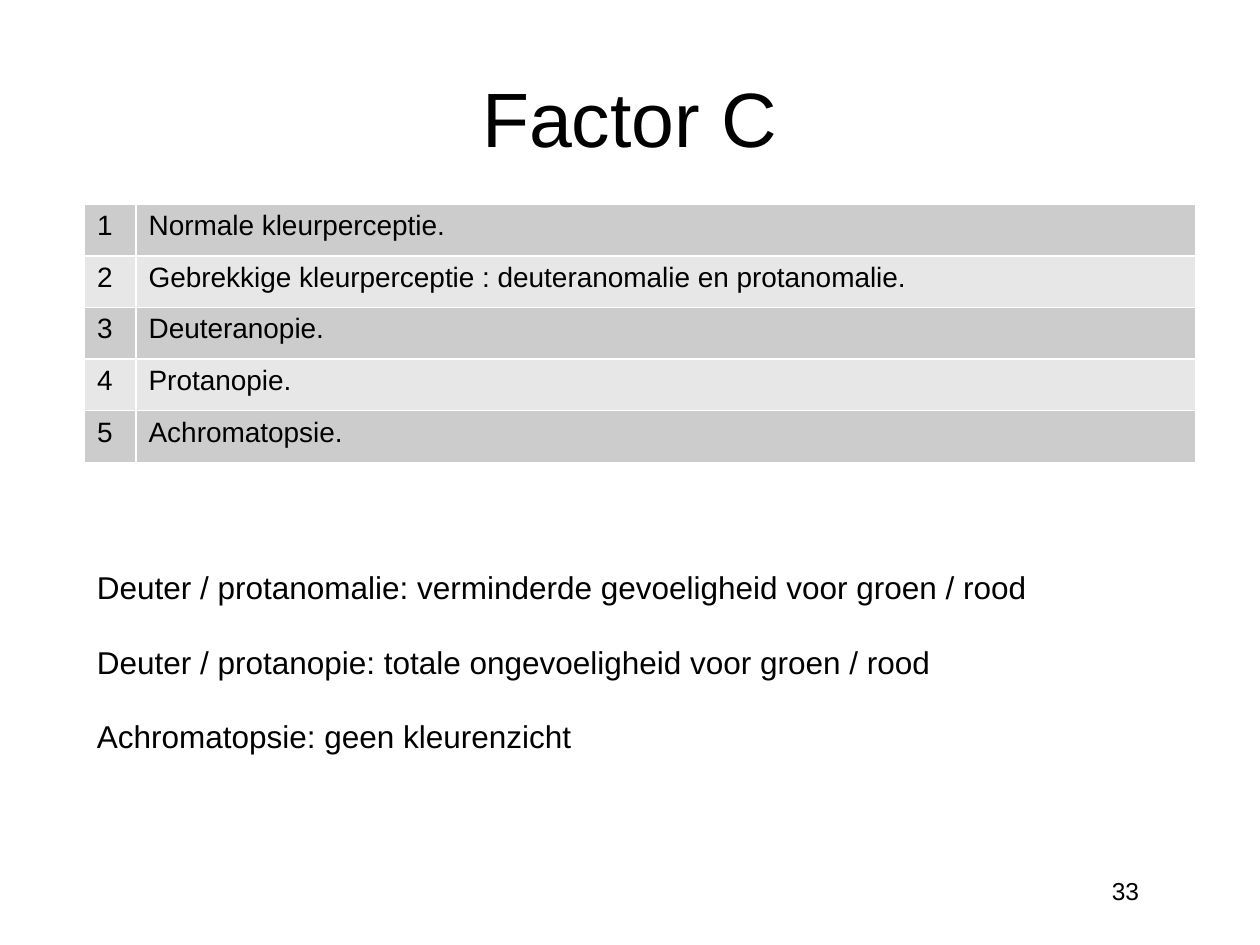
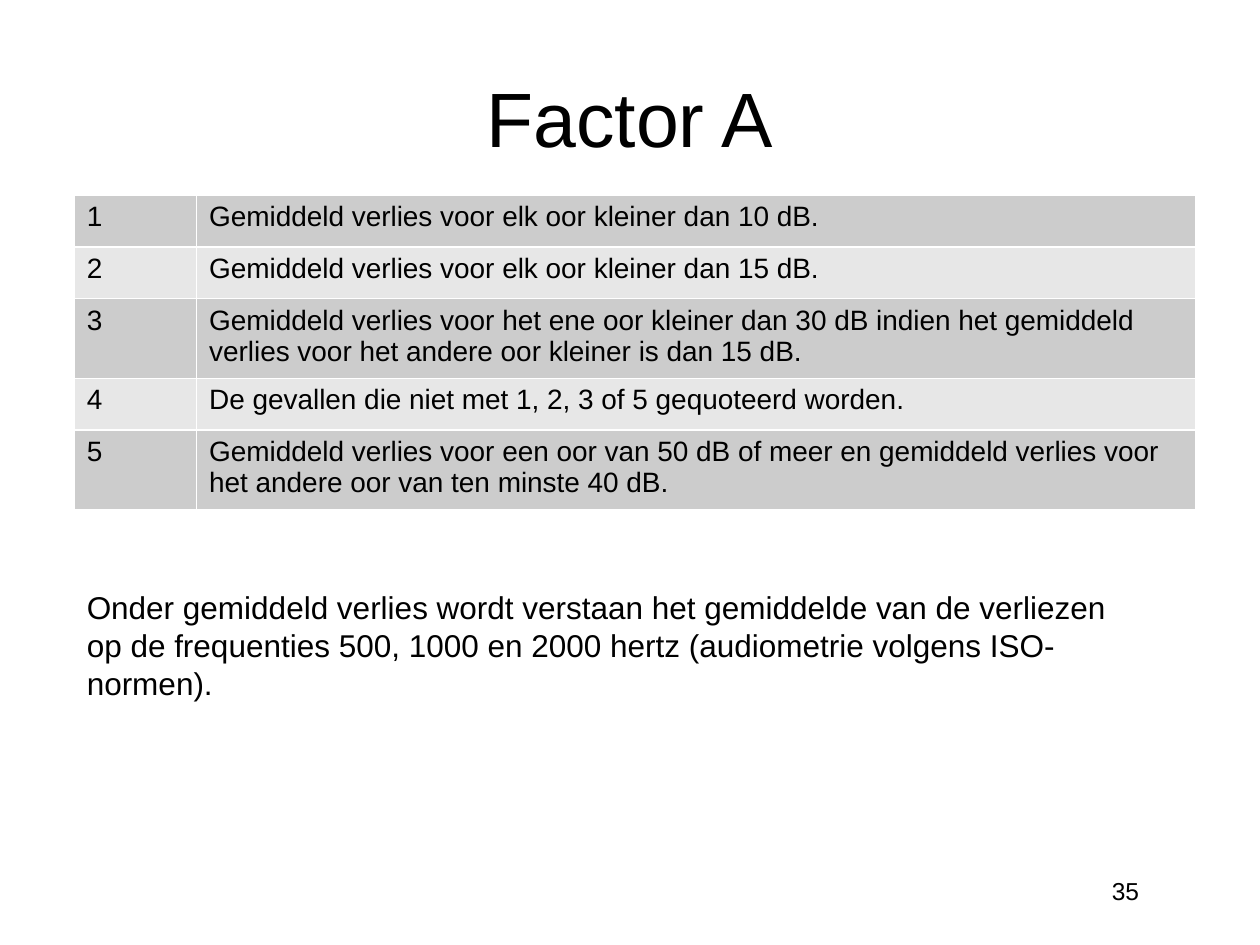
from lxml import etree
from pptx import Presentation
from pptx.dml.color import RGBColor
from pptx.enum.text import MSO_ANCHOR, PP_ALIGN
from pptx.oxml.ns import qn
from pptx.util import Inches, Pt

COLORS = {"text": "000000", "border": "FFFFFF", "dark_row": "CCCCCC", "light_row": "E7E7E7"}
FONT = "Arial"
ROW_HEIGHT = 0.41
TITLE_BOX = (0.5, 0.3, 9, 1.25)
NUMBER_BOX = (6.81, 6.9, 2.33, 0.52)


def write_text(frame, text, size, align=PP_ALIGN.LEFT, anchor=MSO_ANCHOR.TOP, gap=0):
    """Write one paragraph per line of text, with a gap in points between them."""
    frame.word_wrap = True
    frame.vertical_anchor = anchor
    for index, line in enumerate(text.split("\n")):
        paragraph = frame.add_paragraph() if index else frame.paragraphs[0]
        paragraph.alignment = align
        if index and gap:
            paragraph.space_before = Pt(gap)
        run = paragraph.add_run()
        run.text = line
        run.font.name = FONT
        run.font.size = Pt(size)
        run.font.color.rgb = RGBColor.from_string(COLORS["text"])


def add_text(slide, box, text, **text_format):
    shape = slide.shapes.add_textbox(*map(Inches, box))
    write_text(shape.text_frame, text, **text_format)


def add_borders(cell):
    properties = cell._tc.get_or_add_tcPr()
    for side in ("a:lnL", "a:lnR", "a:lnT", "a:lnB"):
        line = etree.SubElement(properties, qn(side), w=str(Pt(1)))
        fill = etree.SubElement(line, qn("a:solidFill"))
        etree.SubElement(fill, qn("a:srgbClr"), val=COLORS["border"])


def add_score_table(slide, left, top, widths, descriptions):
    """Number the descriptions from 1 in rows of alternating grey."""
    count = len(descriptions)
    frame = slide.shapes.add_table(count, 2, Inches(left), Inches(top),
                                   Inches(sum(widths)), Inches(ROW_HEIGHT * count))
    table = frame.table
    table.first_row = table.horz_banding = False
    for column, width in zip(table.columns, widths):
        column.width = Inches(width)
    for index, description in enumerate(descriptions):
        table.rows[index].height = Inches(ROW_HEIGHT)
        row_color = COLORS["light_row" if index % 2 else "dark_row"]
        for cell, text in zip(table.rows[index].cells, (str(index + 1), description)):
            add_borders(cell)
            cell.fill.solid()
            cell.fill.fore_color.rgb = RGBColor.from_string(row_color)
            write_text(cell.text_frame, text, size=16)


def add_factor_slide(presentation, title, number, table_place, widths, descriptions,
                     note_box, note):
    slide = presentation.slides.add_slide(presentation.slide_layouts[6])
    # Title
    add_text(slide, TITLE_BOX, title, size=44, align=PP_ALIGN.CENTER,
             anchor=MSO_ANCHOR.MIDDLE)
    # Scores and their explanation
    add_score_table(slide, *table_place, widths, descriptions)
    add_text(slide, note_box, note, size=18, gap=21)
    # Slide number
    add_text(slide, NUMBER_BOX, number, size=14, align=PP_ALIGN.RIGHT)


def main():
    presentation = Presentation()
    presentation.slide_width = Inches(10)
    presentation.slide_height = Inches(7.5)

    # Colour perception
    add_factor_slide(
        presentation, "Factor C", "33", (0.67, 1.62), (0.41, 8.41),
        ["Normale kleurperceptie.",
         "Gebrekkige kleurperceptie : deuteranomalie en protanomalie.",
         "Deuteranopie.",
         "Protanopie.",
         "Achromatopsie."],
        (0.67, 4.46, 8.82, 1.62),
        "Deuter / protanomalie: verminderde gevoeligheid voor groen / rood\n"
        "Deuter / protanopie: totale ongevoeligheid voor groen / rood\n"
        "Achromatopsie: geen kleurenzicht")

    # Hearing
    add_factor_slide(
        presentation, "Factor A", "35", (0.59, 1.55), (0.97, 7.93),
        ["Gemiddeld verlies voor elk oor kleiner dan 10 dB.",
         "Gemiddeld verlies voor elk oor kleiner dan 15 dB.",
         "Gemiddeld verlies voor het ene oor kleiner dan 30 dB indien het gemiddeld "
         "verlies voor het andere oor kleiner is dan 15 dB.",
         "De gevallen die niet met 1, 2, 3 of 5 gequoteerd worden.",
         "Gemiddeld verlies voor een oor van 50 dB of meer en gemiddeld verlies voor "
         "het andere oor van ten minste 40 dB."],
        (0.59, 4.62, 8.58, 1.01),
        "Onder gemiddeld verlies wordt verstaan het gemiddelde van de verliezen op de "
        "frequenties 500, 1000 en 2000 hertz (audiometrie volgens ISO-normen).")

    presentation.save("out.pptx")


if __name__ == "__main__":
    main()
